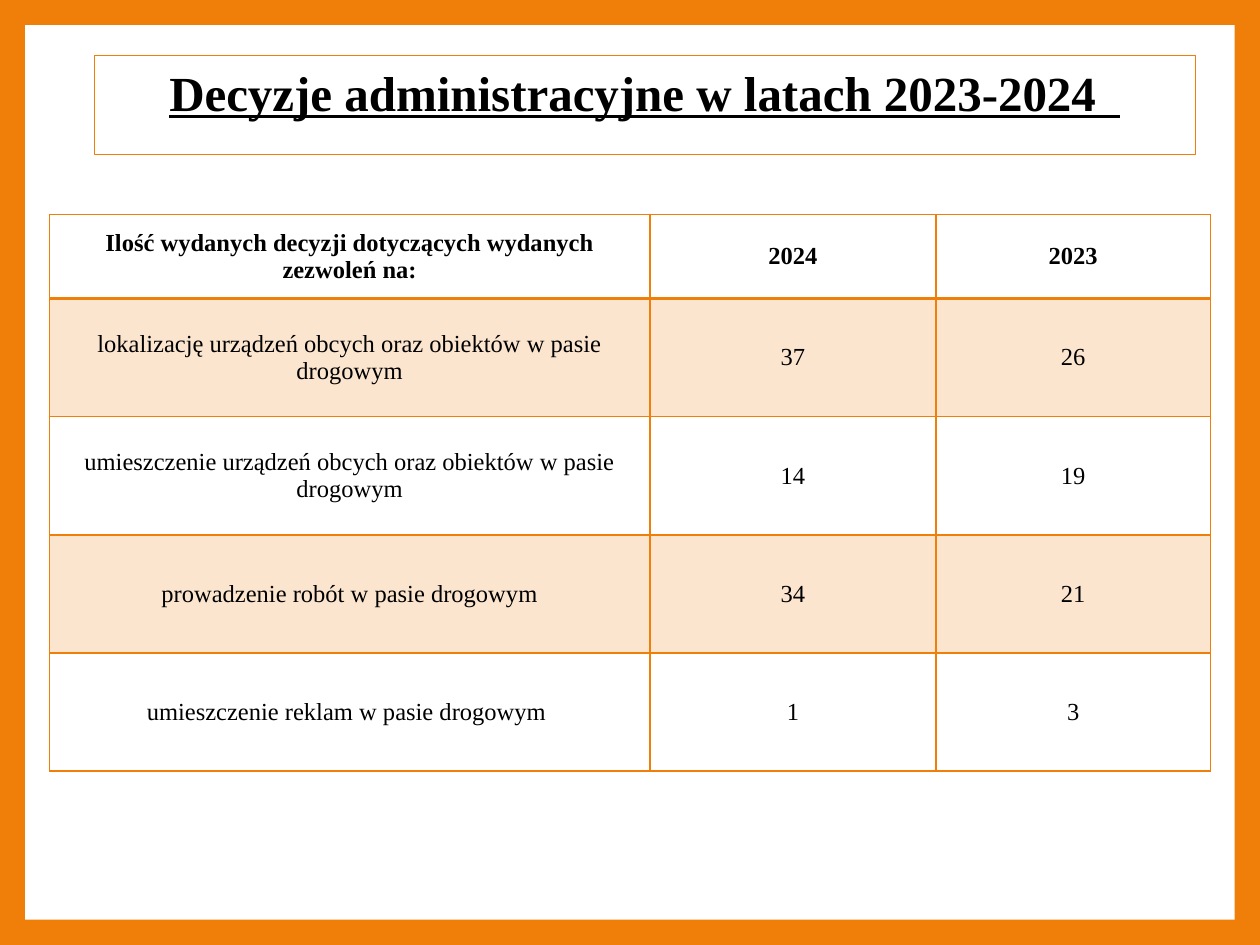
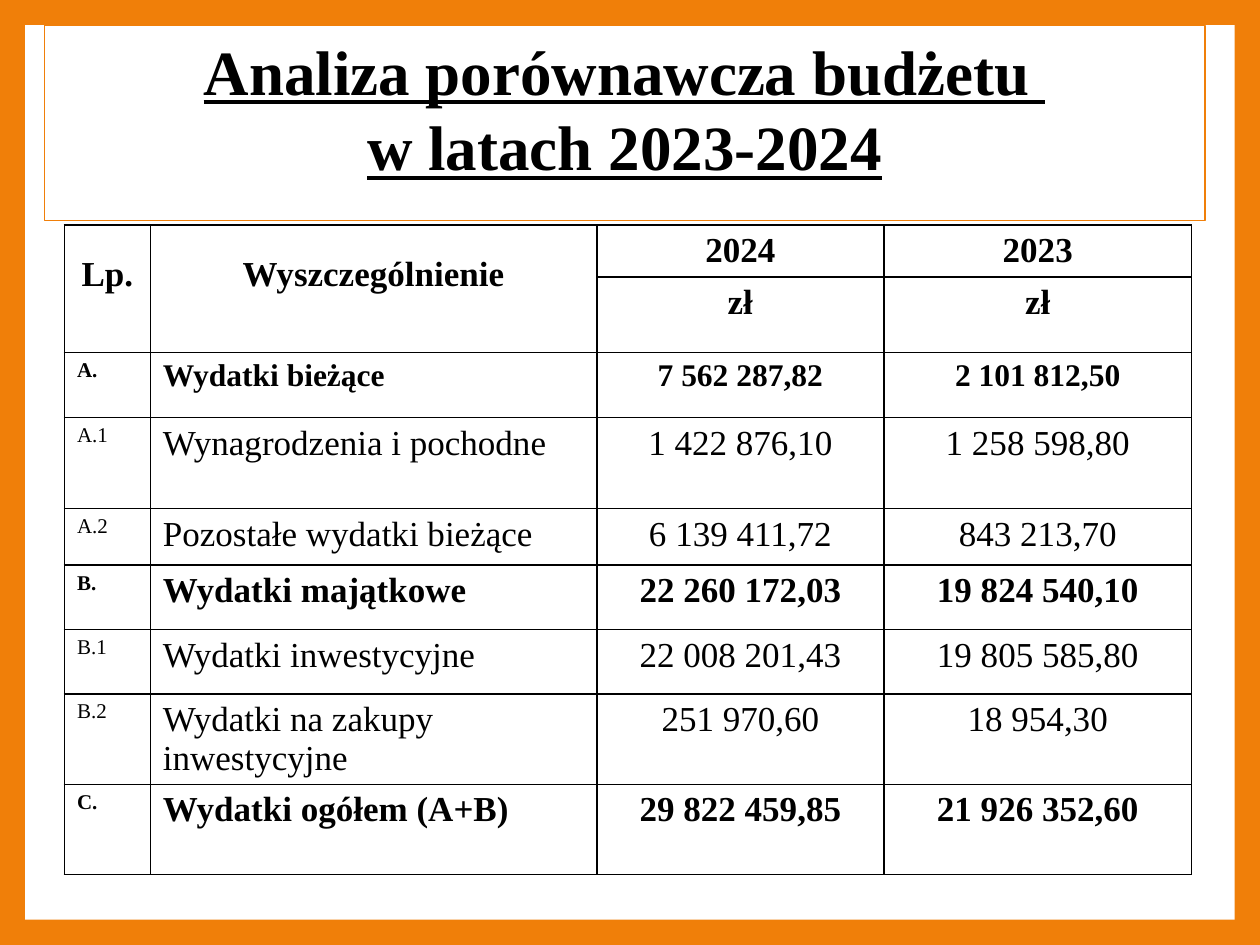
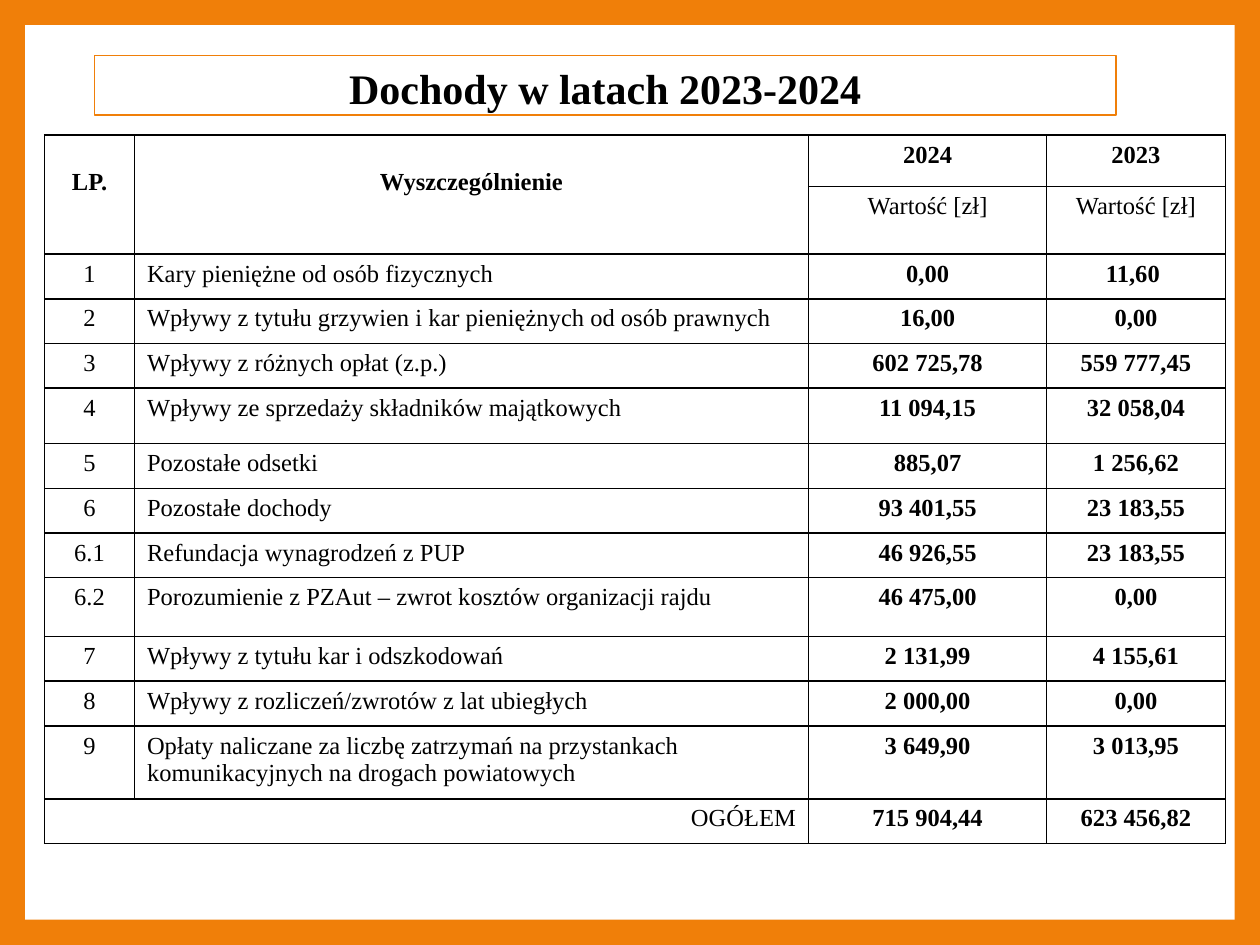
from lxml.etree import SubElement
from pptx import Presentation
from pptx.dml.color import RGBColor
from pptx.enum.shapes import MSO_SHAPE
from pptx.enum.text import MSO_ANCHOR, MSO_AUTO_SIZE, PP_ALIGN
from pptx.oxml.ns import qn
from pptx.util import Cm, Pt

ORANGE = RGBColor(0xF0, 0x7F, 0x09)
PALE_ORANGE = RGBColor(0xFC, 0xE5, 0xCE)
WHITE = RGBColor(0xFF, 0xFF, 0xFF)
BLACK = RGBColor(0x00, 0x00, 0x00)
FONT_NAME = "Times New Roman"
TITLE_ONLY = 5
BORDER_SIDES = {"L": "a:lnL", "R": "a:lnR", "T": "a:lnT", "B": "a:lnB"}

DECISIONS = [
    ("Ilość wydanych decyzji dotyczących wydanych zezwoleń na:", "2024", "2023"),
    ("lokalizację urządzeń obcych oraz obiektów w pasie drogowym", "37", "26"),
    ("umieszczenie urządzeń obcych oraz obiektów w pasie drogowym", "14", "19"),
    ("prowadzenie robót w pasie drogowym", "34", "21"),
    ("umieszczenie reklam w pasie drogowym ", "1", "3"),
]
BUDGET = [
    ("Lp.", "Wyszczególnienie", "2024", "2023"),
    ("", "", "zł", "zł"),
    ("A.", "Wydatki bieżące", "7 562 287,82", "2 101 812,50"),
    ("A.1", "Wynagrodzenia i pochodne", "1 422 876,10", "1 258 598,80"),
    ("A.2", "Pozostałe wydatki bieżące", "6 139 411,72", "843 213,70"),
    ("B.", "Wydatki majątkowe", "22 260 172,03", "19 824 540,10"),
    ("B.1", "Wydatki inwestycyjne", "22 008 201,43", "19 805 585,80"),
    ("B.2", "Wydatki na zakupy inwestycyjne", "251 970,60", "18 954,30"),
    ("C.", "Wydatki ogółem (A+B)", "29 822 459,85", "21 926 352,60"),
]
INCOME = [
    ("LP.", "Wyszczególnienie", "2024", "2023"),
    ("", "", "Wartość [zł]", "Wartość [zł]"),
    ("1", "Kary pieniężne od osób fizycznych", "0,00", "11,60 "),
    ("2", "Wpływy z tytułu grzywien i kar pieniężnych od osób prawnych", "16,00", "0,00"),
    ("3", "Wpływy z różnych opłat (z.p.)", "602 725,78", "559 777,45"),
    ("4", "Wpływy ze sprzedaży składników majątkowych", "11 094,15", "32 058,04"),
    ("5", "Pozostałe odsetki", "885,07", "1 256,62"),
    ("6", "Pozostałe dochody", "93 401,55", "23 183,55"),
    ("6.1", "Refundacja wynagrodzeń z PUP", "46 926,55", "23 183,55"),
    ("6.2", "Porozumienie z PZAut – zwrot kosztów organizacji rajdu", "46 475,00", "0,00"),
    ("7", "Wpływy z tytułu kar i odszkodowań", "2 131,99", "4 155,61"),
    ("8", "Wpływy z rozliczeń/zwrotów z lat ubiegłych", "2 000,00", "0,00"),
    ("9", "Opłaty naliczane za liczbę zatrzymań na przystankach "
          "komunikacyjnych na drogach powiatowych", "3 649,90", "3 013,95"),
    ("OGÓŁEM", "", "715 904,44", "623 456,82"),
]


def apply_format(target, values):
    for name, value in values.items():
        setattr(target, name, value)


def write_text(text_frame, text, alignment, font_format):
    text_frame.text = text
    for paragraph in text_frame.paragraphs:
        paragraph.alignment = alignment
        for run in paragraph.runs:
            apply_format(run.font, {"name": FONT_NAME, **font_format})
            run.font.color.rgb = BLACK


def add_frame(presentation, slide):
    master = presentation.slide_master
    master.background.fill.solid()
    master.background.fill.fore_color.rgb = ORANGE
    margin = Cm(0.51)
    panel = slide.shapes.add_shape(
        MSO_SHAPE.RECTANGLE, margin, margin,
        presentation.slide_width - 2 * margin, presentation.slide_height - 2 * margin)
    panel.shadow.inherit = False
    panel.fill.solid()
    panel.fill.fore_color.rgb = WHITE
    panel.line.fill.background()
    panel.element.nvSpPr.cNvPr.set("id", "50")
    master.shapes.element.insert(2, panel.element)


def place_title(slide, box, text, size, underline=True):
    title = slide.shapes.title
    apply_format(title, dict(zip(("left", "top", "width", "height"), map(Cm, box))))
    title.line.color.rgb = ORANGE
    title.line.width = Pt(0.75)
    apply_format(title.text_frame, {
        "word_wrap": True, "auto_size": MSO_AUTO_SIZE.NONE,
        "vertical_anchor": MSO_ANCHOR.TOP, "margin_top": Cm(0.13)})
    write_text(title.text_frame, text, PP_ALIGN.CENTER,
               {"size": Pt(size), "bold": True, "underline": underline})


def set_borders(cell, color, widths):
    properties = cell._tc.get_or_add_tcPr()
    for side, tag in BORDER_SIDES.items():
        line = SubElement(properties, qn(tag), w=str(Pt(widths.get(side, 1))))
        fill = SubElement(line, qn("a:solidFill"))
        SubElement(fill, qn("a:srgbClr"), val=str(color))


def place_table(slide, position, widths, heights, rows, border_color, style_cell):
    left, top = map(Cm, position)
    table = slide.shapes.add_table(
        len(rows), len(widths), left, top, Cm(sum(widths)), Cm(sum(heights))).table
    apply_format(table, {"first_row": False, "horz_banding": False})
    for column, width in zip(table.columns, widths):
        column.width = Cm(width)
    for row, height in zip(table.rows, heights):
        row.height = Cm(height)
    for row_index, row in enumerate(rows):
        for column_index, text in enumerate(row):
            cell = table.cell(row_index, column_index)
            style = style_cell(row_index, column_index)
            set_borders(cell, border_color, style.get("borders", {}))
            if "fill" in style:
                cell.fill.solid()
                cell.fill.fore_color.rgb = style["fill"]
            else:
                cell.fill.background()
            apply_format(cell, style.get("cell", {}))
            write_text(cell.text_frame, text, style.get("alignment", PP_ALIGN.CENTER),
                       {"size": Pt(style["size"]), "bold": style["bold"]})
    return table


def merge_header(table, drop):
    for column_index in range(2):
        cell = table.cell(0, column_index)
        cell.merge(table.cell(1, column_index))
        cell.margin_top = Cm(drop)


def style_decision(row_index, column_index):
    style = {"size": 14, "bold": row_index == 0,
             "cell": {"vertical_anchor": MSO_ANCHOR.MIDDLE}}
    if row_index < 2:
        style["borders"] = {"B": 2} if row_index == 0 else {"T": 2}
    if row_index % 2:
        style["fill"] = PALE_ORANGE
    return style


def style_budget(row_index, column_index):
    is_header = row_index < 2
    is_total = BUDGET[row_index][0] in ("A.", "B.", "C.")
    size = 18 if row_index == 2 else 20
    if column_index == 0 and not is_header:
        size = 12
    is_label = column_index < 2 and not is_header
    return {"size": size, "bold": is_header or is_total,
            "alignment": PP_ALIGN.LEFT if is_label else PP_ALIGN.CENTER}


def style_income(row_index, column_index):
    is_value = column_index > 1 and row_index != 1
    alignment = PP_ALIGN.CENTER
    if row_index == len(INCOME) - 1 and column_index == 0:
        alignment = PP_ALIGN.RIGHT
    elif row_index > 1 and column_index == 1:
        alignment = PP_ALIGN.LEFT
    return {"size": 14, "bold": row_index == 0 or is_value, "alignment": alignment}


def build_decisions(slide):
    place_title(slide, (1.9, 1.12, 22.2, 2), "Decyzje administracyjne w latach 2023-2024  ", 28)
    place_table(slide, (1, 4.32), (12.1, 5.77, 5.53), [1.7] + [2.38] * 4,
                DECISIONS, ORANGE, style_decision)


def build_budget(slide):
    place_title(slide, (0.89, 0.52, 23.4, 3.93),
                "Analiza porównawcza budżetu \nw latach 2023-2024", 36)
    heights = (1.04, 1.5, 1.32, 1.83, 1.14, 1.3, 1.3, 1.82, 1.82)
    table = place_table(slide, (1.3, 4.54), (1.73, 9, 5.79, 6.2), heights,
                        BUDGET, BLACK, style_budget)
    merge_header(table, 0.61)


def build_income(slide):
    place_title(slide, (1.9, 1.12, 20.6, 1.2), "Dochody w latach 2023-2024", 24, False)
    heights = [0.9] * len(INCOME)
    for row_index, height in {0: 1.04, 1: 1.34, 5: 1.12, 9: 1.19, 12: 1.47}.items():
        heights[row_index] = height
    table = place_table(slide, (0.9, 2.72), (1.81, 13.59, 4.8, 3.6), heights,
                        INCOME, BLACK, style_income)
    merge_header(table, 0.69)
    last_row = len(INCOME) - 1
    table.cell(last_row, 0).merge(table.cell(last_row, 1))


def main():
    presentation = Presentation()
    apply_format(presentation, {"slide_width": Cm(25.4), "slide_height": Cm(19.05)})
    layout = presentation.slide_layouts[TITLE_ONLY]
    builders = (build_decisions, build_budget, build_income)
    slides = [presentation.slides.add_slide(layout) for _ in builders]
    add_frame(presentation, slides[0])
    for build, slide in zip(builders, slides):
        build(slide)
    presentation.save("out.pptx")


if __name__ == "__main__":
    main()
